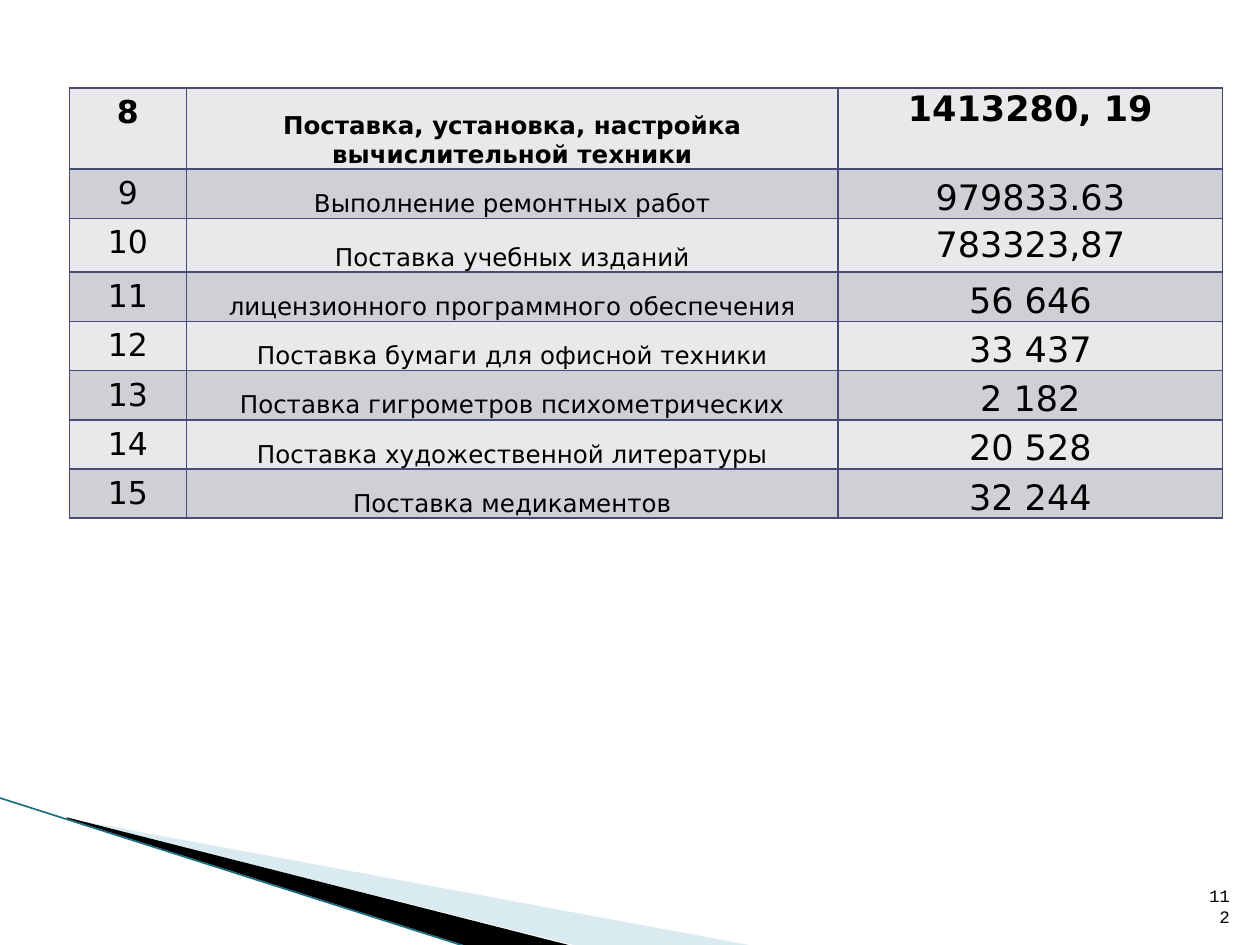
from dataclasses import dataclass

from lxml.etree import SubElement
from pptx import Presentation
from pptx.dml.color import RGBColor
from pptx.enum.shapes import MSO_CONNECTOR
from pptx.enum.text import MSO_ANCHOR, PP_ALIGN
from pptx.oxml.ns import qn
from pptx.util import Pt

BLACK = RGBColor(0x00, 0x00, 0x00)
BORDER = RGBColor(0x47, 0x4B, 0x78)
LIGHT_ROW = RGBColor(0xE9, 0xE9, 0xEC)
DARK_ROW = RGBColor(0xCF, 0xD0, 0xD6)
PALE_BLUE = RGBColor(0xA0, 0xCB, 0xDC)
TEAL = RGBColor(0x1B, 0x6F, 0x85)

TABLE_FONT = "DejaVu Sans"
NUMBER_FONT = "Courier New"
COLUMN_WIDTHS = (67, 372.4, 219.6)
ROW_HEIGHT = 28.1
WIDE_MARGINS = (7.2, 3.6, 7.2, 3.6)
TIGHT_MARGINS = (0.72, 0.72, 0.72, 0)


@dataclass(frozen=True)
class Purchase:
    number: str
    subject: str
    amount: str
    height: float = ROW_HEIGHT
    bold: bool = False
    amount_anchor: MSO_ANCHOR = MSO_ANCHOR.BOTTOM
    amount_margins: tuple = TIGHT_MARGINS


@dataclass(frozen=True)
class Wedge:
    points: tuple
    color: RGBColor
    opacity: int = 100


PURCHASES = (
    Purchase("8", "Поставка, установка, настройка вычислительной техники",
             "1413280, 19", height=46.3, bold=True, amount_anchor=MSO_ANCHOR.TOP),
    Purchase("9", "Выполнение ремонтных работ", "979833.63"),
    Purchase("10", "Поставка учебных изданий", "783323,87", height=30.7,
             amount_anchor=MSO_ANCHOR.TOP, amount_margins=WIDE_MARGINS),
    Purchase("11", "лицензионного программного обеспечения", "56 646"),
    Purchase("12", "Поставка бумаги для офисной техники", "33 437"),
    Purchase("13", "Поставка гигрометров психометрических", "2 182"),
    Purchase("14", "Поставка художественной литературы", "20 528"),
    Purchase("15", "Поставка медикаментов", "32 244"),
)

WEDGES = (
    Wedge(((39.6, 468.4), (428.4, 540.5), (328.3, 540.5), (39.6, 468)), PALE_BLUE, 40),
    Wedge(((38.2, 467.3), (329, 540.7), (267.8, 541.2), (38.9, 468)), BLACK),
)


def write_text(frame, text: str, *, size: float, font: str = TABLE_FONT,
               bold: bool = False, align: PP_ALIGN = PP_ALIGN.CENTER) -> None:
    paragraph = frame.paragraphs[0]
    paragraph.alignment = align
    run = paragraph.add_run()
    run.text = text
    run.font.name = font
    run.font.size = Pt(size)
    run.font.bold = bold
    run.font.color.rgb = BLACK


def draw_wedge(slide, wedge: Wedge) -> None:
    start, *others = wedge.points
    builder = slide.shapes.build_freeform(*start, scale=Pt(1))
    builder.add_line_segments(others, close=True)
    shape = builder.convert_to_shape()
    shape.shadow.inherit = False
    shape.line.fill.background()
    shape.fill.solid()
    shape.fill.fore_color.rgb = wedge.color
    if wedge.opacity < 100:
        color = shape.fill._xPr.find(".//" + qn("a:srgbClr"))
        SubElement(color, qn("a:alpha"), val=str(wedge.opacity * 1000))


def draw_edge(slide) -> None:
    edge = slide.shapes.add_connector(
        MSO_CONNECTOR.STRAIGHT, Pt(-0.7), Pt(455.8), Pt(267.8), Pt(541.4))
    edge.line.color.rgb = TEAL
    edge.line.width = Pt(0.95)
    SubElement(edge._element.spPr, qn("a:effectLst"))


def add_borders(cell) -> None:
    properties = cell._tc.get_or_add_tcPr()
    for position, side in enumerate(("lnL", "lnR", "lnT", "lnB")):
        line = SubElement(properties, qn(f"a:{side}"), w=str(Pt(1)))
        fill = SubElement(line, qn("a:solidFill"))
        SubElement(fill, qn("a:srgbClr"), val=str(BORDER))
        properties.insert(position, line)


def fill_cell(cell, text: str, *, size: float, bold: bool, color: RGBColor,
              anchor: MSO_ANCHOR, margins: tuple) -> None:
    left, top, right, bottom = margins
    cell.margin_left, cell.margin_top = Pt(left), Pt(top)
    cell.margin_right, cell.margin_bottom = Pt(right), Pt(bottom)
    cell.vertical_anchor = anchor
    cell.fill.solid()
    cell.fill.fore_color.rgb = color
    add_borders(cell)
    write_text(cell.text_frame, text, size=size, bold=bold)


def draw_table(slide) -> None:
    height = sum(purchase.height for purchase in PURCHASES)
    table = slide.shapes.add_table(
        len(PURCHASES), len(COLUMN_WIDTHS), Pt(39.6), Pt(50.4),
        Pt(sum(COLUMN_WIDTHS)), Pt(height)).table
    for column, width in zip(table.columns, COLUMN_WIDTHS):
        column.width = Pt(width)
    for index, purchase in enumerate(PURCHASES):
        table.rows[index].height = Pt(purchase.height)
        color = DARK_ROW if index % 2 else LIGHT_ROW
        contents = (
            (purchase.number, 18, MSO_ANCHOR.TOP, WIDE_MARGINS),
            (purchase.subject, 14, MSO_ANCHOR.BOTTOM, TIGHT_MARGINS),
            (purchase.amount, 20, purchase.amount_anchor, purchase.amount_margins),
        )
        for column, (text, size, anchor, margins) in enumerate(contents):
            fill_cell(table.cell(index, column), text, size=size, bold=purchase.bold,
                      color=color, anchor=anchor, margins=margins)


def draw_page_number(slide) -> None:
    box = slide.shapes.add_textbox(Pt(681.1), Pt(504.7), Pt(28.8), Pt(28.8))
    box.text_frame.word_wrap = True
    box.text_frame.vertical_anchor = MSO_ANCHOR.BOTTOM
    write_text(box.text_frame, "112", size=10, font=NUMBER_FONT, align=PP_ALIGN.RIGHT)


def main() -> None:
    presentation = Presentation()
    presentation.slide_width, presentation.slide_height = Pt(720), Pt(540)
    slide = presentation.slides.add_slide(presentation.slide_layouts[6])

    # Corner decoration
    for wedge in WEDGES:
        draw_wedge(slide, wedge)
    draw_edge(slide)

    # Purchases and page number
    draw_table(slide)
    draw_page_number(slide)

    presentation.save("out.pptx")


if __name__ == "__main__":
    main()
